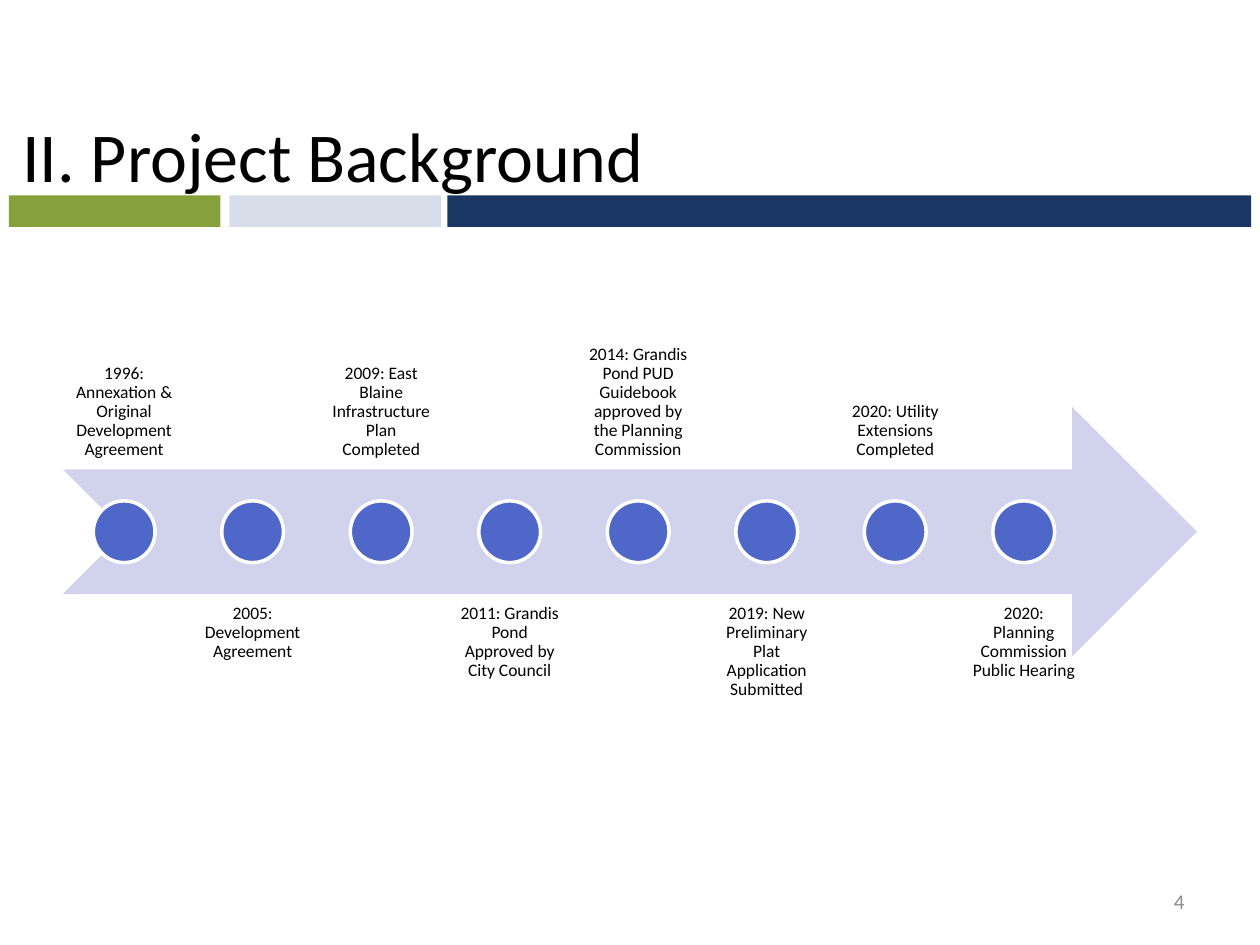
from pptx import Presentation
from pptx.dml.color import RGBColor
from pptx.enum.shapes import MSO_SHAPE
from pptx.enum.text import MSO_ANCHOR, PP_ALIGN
from pptx.util import Inches, Pt

RECTANGLE, OVAL = MSO_SHAPE.RECTANGLE, MSO_SHAPE.OVAL
NOTCHED_ARROW = MSO_SHAPE.NOTCHED_RIGHT_ARROW
TOP, MIDDLE, BOTTOM = MSO_ANCHOR.TOP, MSO_ANCHOR.MIDDLE, MSO_ANCHOR.BOTTOM
LEFT, CENTER, RIGHT = PP_ALIGN.LEFT, PP_ALIGN.CENTER, PP_ALIGN.RIGHT

NAVY = RGBColor(0x1A, 0x36, 0x62)
GREEN = RGBColor(0x86, 0xA1, 0x3C)
PALE_BLUE = RGBColor(0xD7, 0xDE, 0xEA)
LAVENDER = RGBColor(0xD0, 0xD3, 0xEB)
BLUE = RGBColor(0x4E, 0x67, 0xC8)
WHITE = RGBColor(0xFF, 0xFF, 0xFF)
BLACK = RGBColor(0, 0, 0)
GRAY = RGBColor(0x8C, 0x8C, 0x8C)

TITLE = "II. Project Background"
PAGE_NUMBER = "4"
BANDS = [(0.07, 1.68, GREEN), (1.82, 1.68, PALE_BLUE), (3.55, 6.38, NAVY)]
MILESTONES = [
    "1996: Annexation & Original Development Agreement",
    "2005: Development Agreement",
    "2009: East Blaine Infrastructure Plan Completed",
    "2011: Grandis Pond Approved by City Council",
    "2014: Grandis Pond PUD Guidebook approved by the Planning Commission",
    "2019: New Preliminary Plat Application Submitted",
    "2020: Utility Extensions Completed",
    "2020: Planning Commission Public Hearing",
]

ARROW_LEFT, ARROW_TOP, ARROW_WIDTH, ARROW_HEIGHT = 0.5, 3.23, 9, 1.98
LABEL_WIDTH = 0.97
LABEL_TOPS = (ARROW_TOP - 0.75 * ARROW_HEIGHT, ARROW_TOP + 0.75 * ARROW_HEIGHT)
LABEL_ANCHORS = (BOTTOM, TOP)
LABEL_INSET = 0.08
STEP = 1.02
DOT = 0.49


def add_filled(slide, kind, box, fill, outline=None):
    shape = slide.shapes.add_shape(kind, *map(Inches, box))
    shape.shadow.inherit = False
    shape.fill.solid()
    shape.fill.fore_color.rgb = fill
    if outline is None:
        shape.line.fill.background()
    else:
        shape.line.color.rgb = outline
        shape.line.width = Pt(2)


def add_text(slide, text, box, size, color, align, anchor, spacing=1.0, inset=None):
    frame = slide.shapes.add_textbox(*map(Inches, box)).text_frame
    frame_format = {"word_wrap": True, "vertical_anchor": anchor}
    if inset is not None:
        for side in ("left", "top", "right", "bottom"):
            frame_format[f"margin_{side}"] = Inches(inset)
    for name, value in frame_format.items():
        setattr(frame, name, value)
    paragraph = frame.paragraphs[0]
    paragraph.alignment = align
    paragraph.line_spacing = spacing
    run = paragraph.add_run()
    run.text = text
    for name, value in {"name": "Calibri", "size": Pt(size)}.items():
        setattr(run.font, name, value)
    run.font.color.rgb = color


def main():
    deck = Presentation()
    deck.slide_width, deck.slide_height = Inches(10), Inches(7.5)
    slide = deck.slides.add_slide(deck.slide_layouts[6])

    for left, width, color in BANDS:
        add_filled(slide, RECTANGLE, (left, 1.55, width, 0.25), color)
    add_text(slide, TITLE, (0.08, 0.6, 9, 1.25), 40, BLACK, LEFT, MIDDLE)

    arrow_box = (ARROW_LEFT, ARROW_TOP, ARROW_WIDTH, ARROW_HEIGHT)
    add_filled(slide, NOTCHED_ARROW, arrow_box, LAVENDER)
    dot_top = ARROW_TOP + (ARROW_HEIGHT - DOT) / 2
    for index, milestone in enumerate(MILESTONES):
        side = index % 2
        left = ARROW_LEFT + index * STEP
        label_box = (left, LABEL_TOPS[side], LABEL_WIDTH, ARROW_HEIGHT)
        add_text(slide, milestone, label_box, 10, BLACK, CENTER,
                 LABEL_ANCHORS[side], 0.9, LABEL_INSET)
        dot_left = left + (LABEL_WIDTH - DOT) / 2
        add_filled(slide, OVAL, (dot_left, dot_top, DOT, DOT), BLUE, WHITE)

    add_text(slide, PAGE_NUMBER, (7.17, 6.95, 2.33, 0.4), 12, GRAY, RIGHT, MIDDLE)
    deck.save("out.pptx")


if __name__ == "__main__":
    main()
